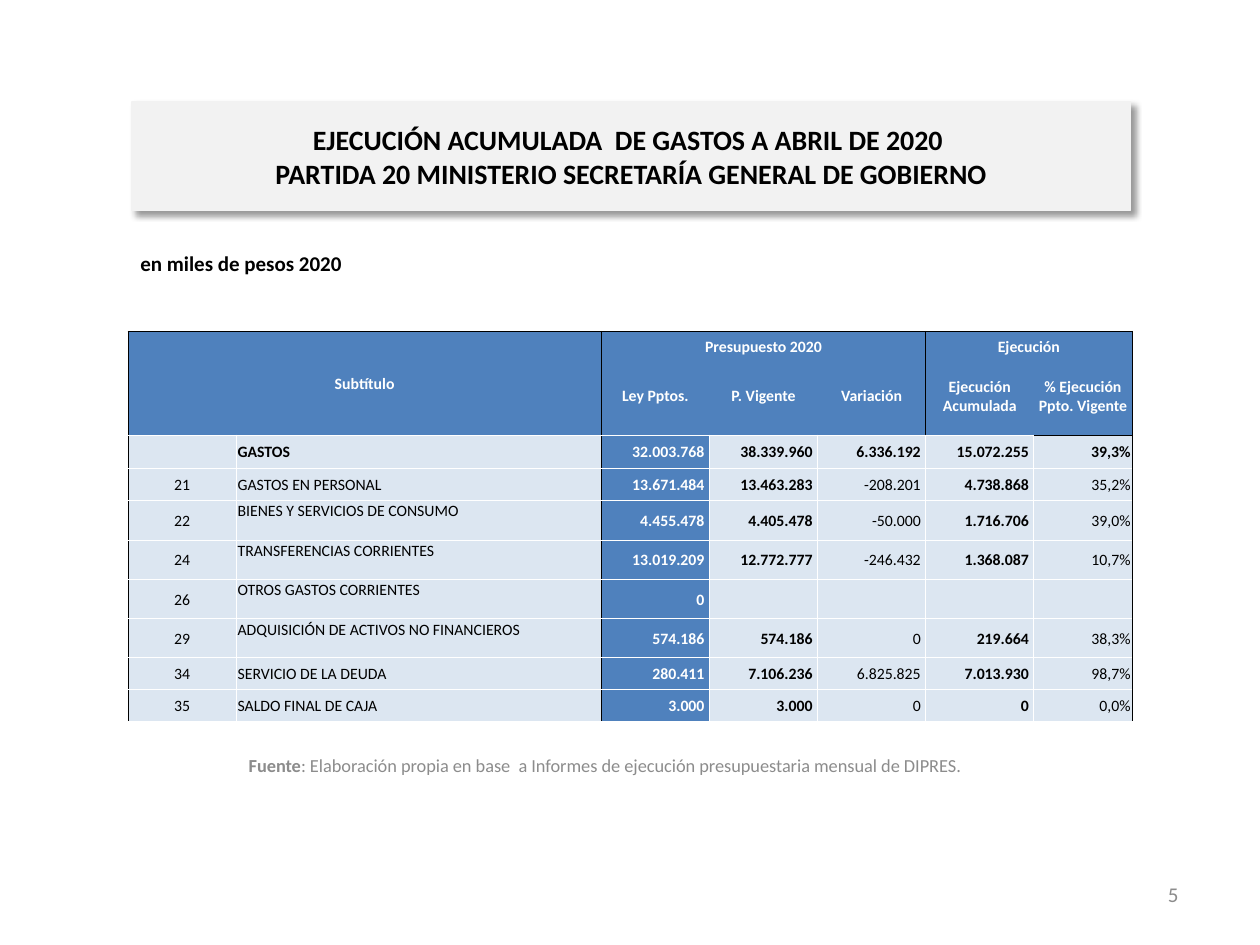
from lxml import etree
from pptx import Presentation
from pptx.dml.color import RGBColor
from pptx.enum.shapes import MSO_SHAPE
from pptx.enum.text import MSO_ANCHOR, PP_ALIGN
from pptx.oxml.ns import qn
from pptx.util import Cm, Pt

LEFT, CENTER, RIGHT = PP_ALIGN.LEFT, PP_ALIGN.CENTER, PP_ALIGN.RIGHT
TOP, MIDDLE, BOTTOM = MSO_ANCHOR.TOP, MSO_ANCHOR.MIDDLE, MSO_ANCHOR.BOTTOM
RECTANGLE = MSO_SHAPE.RECTANGLE

BLACK, WHITE, GRAY, PALE_GRAY = "000000", "FFFFFF", "8C8C8C", "F2F2F2"
BLUE, PALE_BLUE = "4F81BD", "DCE6F1"

HEADER_ROWS = 2
CODE, NAME, LAW, CURRENT, VARIATION, EXECUTED, PERCENT = range(7)
COLUMN_WIDTHS = [2.18, 7.36, 2.18, 2.18, 2.18, 2.18, 1.98]
ROW_HEIGHTS = [0.51, 1.58, 0.67, 0.65, 0.8, 0.79, 0.79, 0.79, 0.64, 0.63]
TALL_ROW = 0.7
MERGES = [((0, CODE), (1, NAME)), ((0, LAW), (0, VARIATION)),
          ((0, EXECUTED), (0, PERCENT))]
ROWS = [
    ["Subtítulo", "", "Presupuesto 2020", "", "", "Ejecución", ""],
    ["", "", "Ley Pptos.", "P. Vigente", "Variación", "Ejecución Acumulada",
     "% Ejecución Ppto. Vigente"],
    ["", "GASTOS", "32.003.768", "38.339.960", "6.336.192", "15.072.255", "39,3%"],
    ["21", "GASTOS EN PERSONAL", "13.671.484", "13.463.283", "-208.201",
     "4.738.868", "35,2%"],
    ["22", "BIENES Y SERVICIOS DE CONSUMO", "4.455.478", "4.405.478", "-50.000",
     "1.716.706", "39,0%"],
    ["24", "TRANSFERENCIAS CORRIENTES", "13.019.209", "12.772.777", "-246.432",
     "1.368.087", "10,7%"],
    ["26", "OTROS GASTOS CORRIENTES", "0", "", "", "", ""],
    ["29", "ADQUISICIÓN DE ACTIVOS NO FINANCIEROS", "574.186", "574.186", "0",
     "219.664", "38,3%"],
    ["34", "SERVICIO DE LA DEUDA", "280.411", "7.106.236", "6.825.825",
     "7.013.930", "98,7%"],
    ["35", "SALDO FINAL DE CAJA", "3.000", "3.000", "0", "0", "0,0%"],
]


def rgb(value):
    return RGBColor.from_string(value)


def set_attributes(target, values):
    for name, value in values.items():
        setattr(target, name, value)


def border_colors(row, column, last_row, last_column):
    """Give the colour of each edge of a cell or merged block; None is no line."""
    header = row < HEADER_ROWS
    inner = None if header else WHITE
    left_black = (CODE, LAW, EXECUTED) if header else (CODE, LAW)
    right_black = (NAME, VARIATION, PERCENT) if header else (NAME, PERCENT)
    under_header = BLACK if last_column == PERCENT and last_row > 0 else WHITE
    top, bottom = inner, inner
    if row == 0:
        top = BLACK
    elif row == HEADER_ROWS:
        top = BLACK if column == PERCENT else WHITE
    if last_row == HEADER_ROWS - 1:
        bottom = under_header
    elif last_row == len(ROWS) - 1:
        bottom = None
    return {"a:lnL": BLACK if column in left_black else inner,
            "a:lnR": BLACK if last_column in right_black else inner,
            "a:lnT": top, "a:lnB": bottom}


def cell_format(row, column):
    """Give fill, text colour, weight, alignment and anchor of a table cell."""
    if row < HEADER_ROWS:
        anchor = BOTTOM if row == 0 and column > NAME else MIDDLE
        return BLUE, WHITE, True, CENTER, anchor
    fill, color = (BLUE, WHITE) if column == LAW else (PALE_BLUE, BLACK)
    bold = row == HEADER_ROWS or column in (LAW, CURRENT, EXECUTED)
    alignment = {CODE: CENTER, NAME: LEFT}.get(column, RIGHT)
    tall = column == NAME and ROW_HEIGHTS[row] > TALL_ROW
    return fill, color, bold, alignment, TOP if tall else MIDDLE


class SlideBuilder:
    font = "Calibri"
    table_size = 9
    border_width = Pt(0.5)

    def __init__(self, slide):
        self.slide = slide

    def add_run(self, paragraph, text, size, color, bold=False):
        run = paragraph.add_run()
        run.text = text
        set_attributes(run.font, {"name": self.font, "size": Pt(size), "bold": bold})
        run.font.color.rgb = rgb(color)

    def text(self, box, runs, size, color, alignment, anchor=MIDDLE):
        """Add a text box; runs are pairs of text and bold."""
        shape = self.slide.shapes.add_textbox(*map(Cm, box))
        set_attributes(shape.text_frame, {"word_wrap": True, "vertical_anchor": anchor})
        paragraph = shape.text_frame.paragraphs[0]
        paragraph.alignment = alignment
        for text, bold in runs:
            self.add_run(paragraph, text, size, color, bold)

    def banner(self, box, lines, size):
        """Add the shadowed title panel."""
        shape = self.slide.shapes.add_shape(RECTANGLE, *map(Cm, box))
        shape.fill.solid()
        shape.fill.fore_color.rgb = rgb(PALE_GRAY)
        shape.line.color.rgb = rgb(PALE_GRAY)
        shape.line.width = Pt(0.75)
        shape.shadow.inherit = False
        effects = shape.element.spPr.find(qn("a:effectLst"))
        shadow = etree.SubElement(effects, qn("a:outerShdw"), blurRad=str(Pt(4)),
                                  dist=str(Pt(3)), dir="2700000", algn="tl",
                                  rotWithShape="0")
        color = etree.SubElement(shadow, qn("a:srgbClr"), val=BLACK)
        etree.SubElement(color, qn("a:alpha"), val="40000")
        set_attributes(shape.text_frame, {"word_wrap": True, "vertical_anchor": MIDDLE})
        paragraph = shape.text_frame.paragraphs[0]
        paragraph.alignment = CENTER
        for index, line in enumerate(lines):
            if index:
                paragraph.add_line_break()
            self.add_run(paragraph, line, size, BLACK, True)

    def borders(self, cell, colors):
        properties = cell._tc.get_or_add_tcPr()
        for index, (tag, color) in enumerate(colors.items()):
            line = etree.Element(qn(tag), w=str(self.border_width))
            if color:
                fill = etree.SubElement(line, qn("a:solidFill"))
                etree.SubElement(fill, qn("a:srgbClr"), val=color)
            else:
                etree.SubElement(line, qn("a:noFill"))
            properties.insert(index, line)

    def cell(self, cell, row, column, text):
        fill, color, bold, alignment, anchor = cell_format(row, column)
        number = row >= HEADER_ROWS and LAW <= column < PERCENT
        set_attributes(cell, {
            "margin_left": Cm(0.03), "margin_top": Cm(0.03), "margin_bottom": 0,
            "margin_right": Cm(0.1 if number else 0.03), "vertical_anchor": anchor})
        cell.fill.solid()
        cell.fill.fore_color.rgb = rgb(fill)
        paragraph = cell.text_frame.paragraphs[0]
        paragraph.alignment = alignment
        if text:
            self.add_run(paragraph, text, self.table_size, color, bold)
        else:
            etree.SubElement(paragraph._p, qn("a:endParaRPr"),
                             sz=str(self.table_size * 100))
        last_row = row + cell.span_height - 1
        last_column = column + cell.span_width - 1
        self.borders(cell, border_colors(row, column, last_row, last_column))

    def table(self, left, top):
        frame = self.slide.shapes.add_table(
            len(ROWS), len(COLUMN_WIDTHS), Cm(left), Cm(top),
            Cm(sum(COLUMN_WIDTHS)), Cm(sum(ROW_HEIGHTS)))
        table = frame.table
        set_attributes(table, {"first_row": False, "horz_banding": False})
        for column, width in zip(table.columns, COLUMN_WIDTHS):
            column.width = Cm(width)
        for row, height in zip(table.rows, ROW_HEIGHTS):
            row.height = Cm(height)
        for first, last in MERGES:
            table.cell(*first).merge(table.cell(*last))
        for row, values in enumerate(ROWS):
            for column, text in enumerate(values):
                self.cell(table.cell(row, column), row, column, text)


def main():
    presentation = Presentation()
    presentation.slide_width, presentation.slide_height = Cm(25.4), Cm(19.05)
    slide = presentation.slides.add_slide(presentation.slide_layouts[6])
    builder = SlideBuilder(slide)
    builder.banner((2.66, 2.06, 20.13, 2.18),
                   ["EJECUCIÓN ACUMULADA  DE GASTOS A ABRIL DE 2020 ",
                    "PARTIDA 20 MINISTERIO SECRETARÍA GENERAL DE GOBIERNO"], 16)
    builder.text((2.2, 14.92, 20, 1.01), [
        ("Fuente", True),
        (": Elaboración propia en base  a Informes de ejecución presupuestaria "
         "mensual de DIPRES.", False)], 10.5, GRAY, CENTER)
    builder.text((18.08, 17.53, 5.93, 1.01), [("5", False)], 12, GRAY, RIGHT)
    builder.text((2.58, 4.93, 20.13, 0.78), [("en miles de pesos 2020", True)],
                 12, BLACK, LEFT, TOP)
    builder.table(2.58, 6.68)
    presentation.save("out.pptx")


if __name__ == "__main__":
    main()
